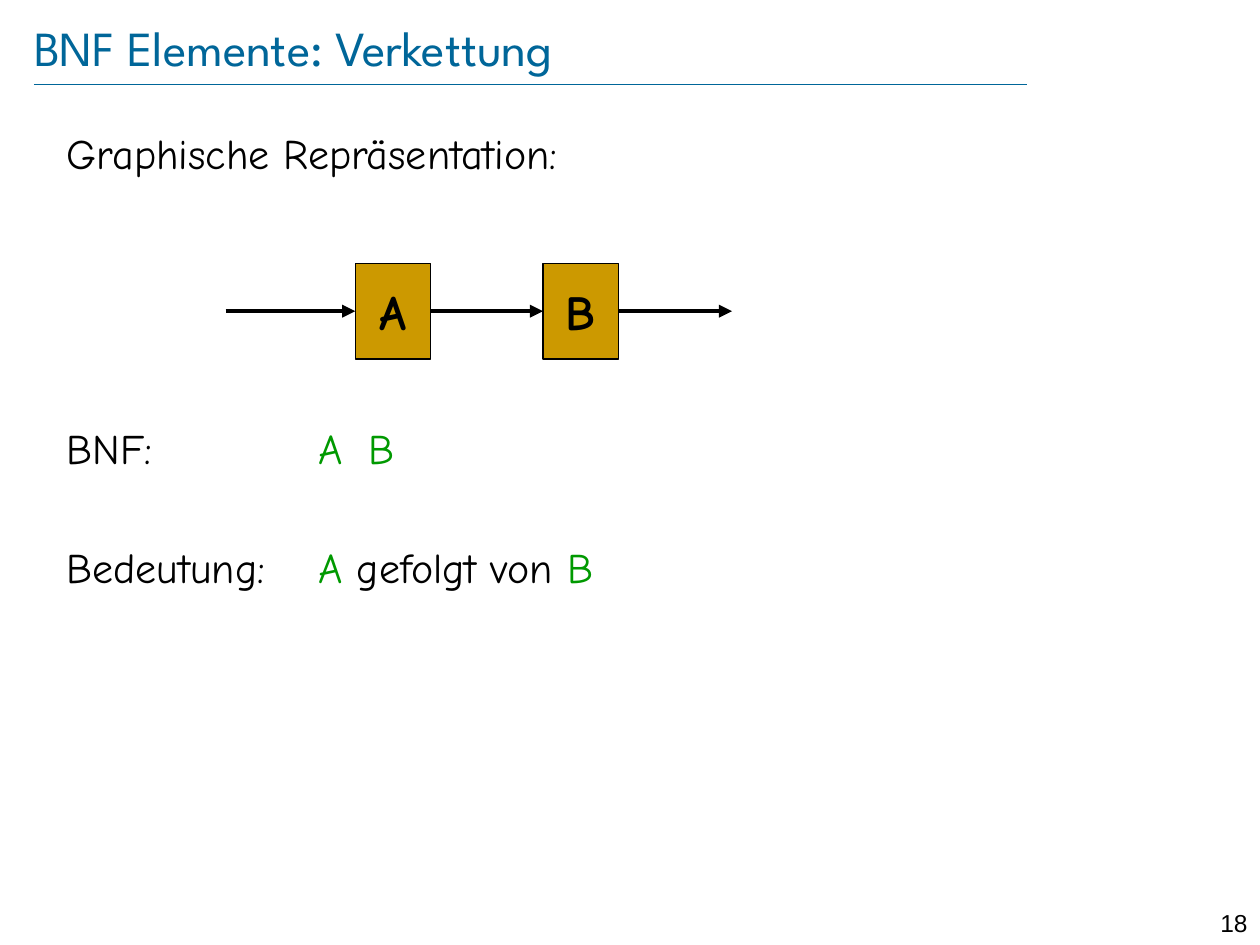
from dataclasses import dataclass

from lxml import etree
from pptx import Presentation
from pptx.dml.color import RGBColor
from pptx.enum.shapes import MSO_CONNECTOR, MSO_SHAPE
from pptx.enum.text import MSO_ANCHOR, PP_ALIGN
from pptx.oxml.ns import qn
from pptx.util import Inches, Pt

STRAIGHT = MSO_CONNECTOR.STRAIGHT
RECTANGLE = MSO_SHAPE.RECTANGLE
MIDDLE, TOP = MSO_ANCHOR.MIDDLE, MSO_ANCHOR.TOP
LEFT, CENTER, RIGHT = PP_ALIGN.LEFT, PP_ALIGN.CENTER, PP_ALIGN.RIGHT
LEFT_SIDE, RIGHT_SIDE = 1, 3


@dataclass(frozen=True)
class Theme:
    accent: str = "006699"
    ink: str = "000000"
    symbol: str = "009900"
    node: str = "CC9900"
    title_font: str = "League Spartan"
    body_font: str = "Comic Neue"
    number_font: str = "Arial"
    large: int = 28
    body: int = 24
    small: int = 14
    rule: float = 0.25
    border: float = 0.75
    arrow: float = 2.5


class SlideBuilder:
    def __init__(self, slide, theme):
        self.slide = slide
        self.theme = theme

    def style(self, font, name, size, color, bold=False):
        font.name = name
        font.size = Pt(size)
        font.bold = bold
        font.color.rgb = RGBColor.from_string(color)

    def frame(self, left, top, width, height, inset=True):
        box = self.slide.shapes.add_textbox(
            Inches(left), Inches(top), Inches(width), Inches(height))
        text_frame = box.text_frame
        text_frame.word_wrap = True
        if not inset:
            text_frame.margin_left = text_frame.margin_right = 0
            text_frame.margin_top = text_frame.margin_bottom = 0
        return text_frame

    def label(self, text, area, font, size, color, align=LEFT, anchor=TOP, inset=True):
        text_frame = self.frame(*area, inset=inset)
        text_frame.vertical_anchor = anchor
        text_frame.text = text
        paragraph = text_frame.paragraphs[0]
        paragraph.alignment = align
        self.style(paragraph.runs[0].font, font, size, color)

    def body(self, area, rows, tab_stops):
        text_frame = self.frame(*area)
        for index, (gap, parts) in enumerate(rows):
            paragraph = text_frame.paragraphs[0] if index == 0 else text_frame.add_paragraph()
            tabs = etree.SubElement(paragraph._p.get_or_add_pPr(), qn("a:tabLst"))
            for stop in tab_stops:
                etree.SubElement(tabs, qn("a:tab"), pos=str(Inches(stop)), algn="l")
            if gap:
                paragraph.space_before = Pt(gap)
            for text, color in parts:
                run = paragraph.add_run()
                run.text = text
                self.style(run.font, self.theme.body_font, self.theme.body, color)

    def node(self, text, left, top, width, height):
        shape = self.slide.shapes.add_shape(
            RECTANGLE, Inches(left), Inches(top), Inches(width), Inches(height))
        shape.shadow.inherit = False
        shape.fill.solid()
        shape.fill.fore_color.rgb = RGBColor.from_string(self.theme.node)
        shape.line.color.rgb = RGBColor.from_string(self.theme.ink)
        shape.line.width = Pt(self.theme.border)
        text_frame = shape.text_frame
        text_frame.word_wrap = False
        text_frame.vertical_anchor = MIDDLE
        text_frame.text = text
        paragraph = text_frame.paragraphs[0]
        paragraph.alignment = CENTER
        self.style(paragraph.runs[0].font, self.theme.body_font,
                   self.theme.large, self.theme.ink, bold=True)
        return shape

    def line(self, start, end, y, color, width):
        connector = self.slide.shapes.add_connector(
            STRAIGHT, Inches(start), Inches(y), Inches(end), Inches(y))
        connector.line.color.rgb = RGBColor.from_string(color)
        connector.line.width = Pt(width)
        etree.SubElement(connector._element.spPr, qn("a:effectLst"))
        return connector

    def arrow(self, start, end, y, source=None, target=None):
        connector = self.line(start, end, y, self.theme.ink, self.theme.arrow)
        etree.SubElement(connector.line._get_or_add_ln(), qn("a:tailEnd"), type="triangle")
        if source is not None:
            connector.begin_connect(source, RIGHT_SIDE)
        if target is not None:
            connector.end_connect(target, LEFT_SIDE)


def main():
    presentation = Presentation()
    presentation.slide_width = Inches(10)
    presentation.slide_height = Inches(7.5)
    theme = Theme()
    builder = SlideBuilder(
        presentation.slides.add_slide(presentation.slide_layouts[6]), theme)

    builder.line(0.27, 8.15, 0.67, theme.accent, theme.rule)
    builder.label("18", (9.45, 7.16, 0.55, 0.24), theme.number_font, theme.small,
                  theme.ink, align=RIGHT)
    builder.label("BNF Elemente: Verkettung", (0.27, 0.13, 8.69, 0.48),
                  theme.title_font, theme.large, theme.accent, anchor=MIDDLE, inset=False)

    builder.body((0.43, 0.96, 9.4, 6.17), [
        (0, [("Graphische Repräsentation:", theme.ink)]),
        (140, [("BNF:\t", theme.ink), ("A\tB", theme.symbol)]),
        (39, [("Bedeutung:\t", theme.ink), ("A ", theme.symbol),
              ("gefolgt von ", theme.ink), ("B", theme.symbol)]),
    ], tab_stops=(2, 2.4))

    node_width, node_height = 0.6, 0.76
    first_left, pitch, flow_y = 2.82, 1.49, 2.47
    start, previous = 1.79, None
    for index, symbol in enumerate("AB"):
        left = first_left + index * pitch
        node = builder.node(symbol, left, flow_y - node_height / 2, node_width, node_height)
        builder.arrow(start, left, flow_y, previous, node)
        start, previous = left + node_width, node
    builder.arrow(start, start + 0.9, flow_y, previous)

    presentation.save("out.pptx")


if __name__ == "__main__":
    main()
